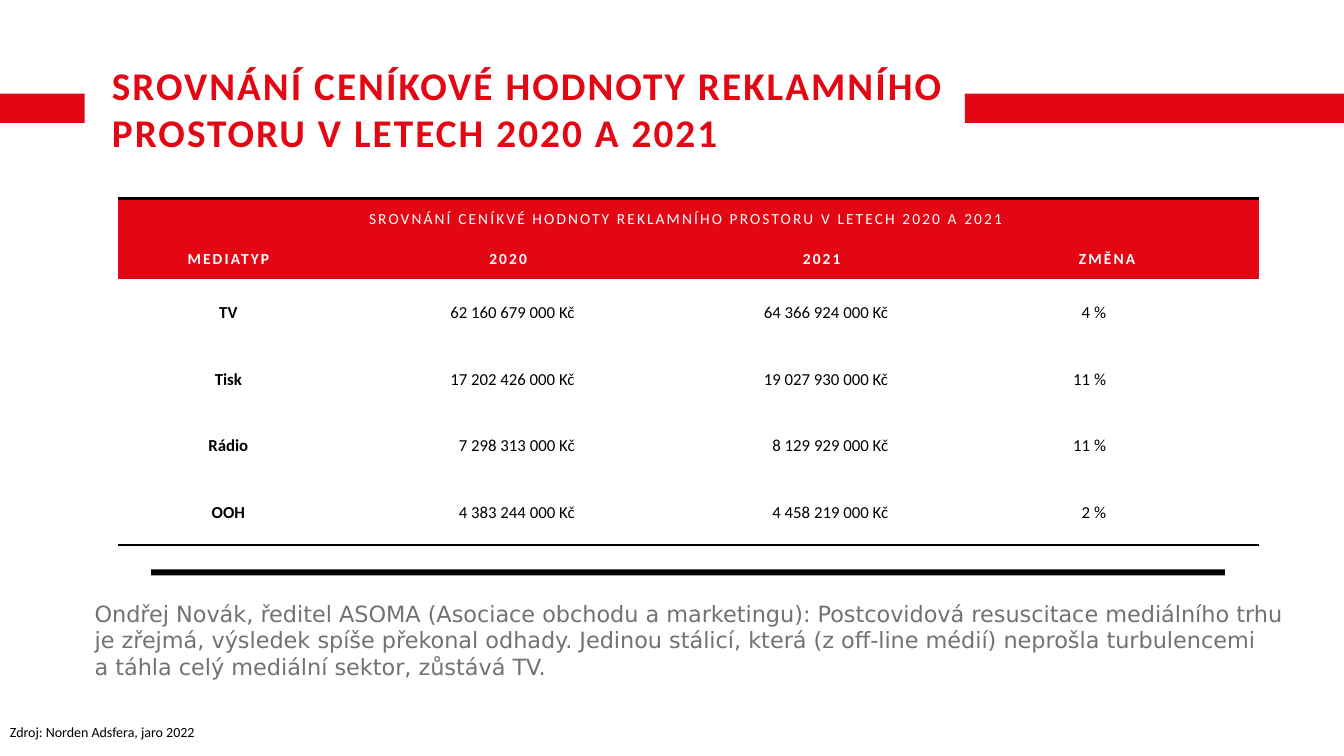
import pptx
import pptx.dml.color
import pptx.enum.shapes
import pptx.enum.text
import pptx.oxml
import pptx.oxml.ns
import pptx.util

Inches = pptx.util.Inches
Pt = pptx.util.Pt
Align = pptx.enum.text.PP_ALIGN
Anchor = pptx.enum.text.MSO_ANCHOR
RGBColor = pptx.dml.color.RGBColor

RED = RGBColor(0xE3, 0x06, 0x13)
BLACK = RGBColor(0, 0, 0)
WHITE = RGBColor(0xFF, 0xFF, 0xFF)
GREY = RGBColor(0x70, 0x72, 0x76)

NO_GRID_STYLE = "{2D5ABB26-0587-4C30-8999-92F81FD0307C}"
TITLE = "SROVNÁNÍ CENÍKOVÉ HODNOTY REKLAMNÍHO PROSTORU V LETECH 2020 A 2021"
TABLE_TITLE = "SROVNÁNÍ CENÍKVÉ HODNOTY REKLAMNÍHO PROSTORU V LETECH 2020 A 2021"
HEADINGS = ["MEDIATYP", "2020", "2021", "ZMĚNA"]
HEADING_INDENTS = [0.01, 0.27, 0.38, 0.01]
MEDIA = [
    ["TV", "62 160 679 000 Kč", "64 366 924 000 Kč", "4 %"],
    ["Tisk", "17 202 426 000 Kč", "19 027 930 000 Kč", "11 %"],
    ["Rádio", "7 298 313 000 Kč", "8 129 929 000 Kč", "11 %"],
    ["OOH", "4 383 244 000 Kč", "4 458 219 000 Kč", "2 %"],
]
VALUE_INDENTS = [0.01, 0.76, 0.66, 0.01]
COLUMN_WIDTHS = [2.19, 3.1, 3.01, 1.51, 1.51]
ROW_HEIGHTS = [0.4] * 2 + [0.66] * 4
QUOTE = (
    "Ondřej Novák, ředitel ASOMA (Asociace obchodu a marketingu): Postcovidová resuscitace mediálního trhu\v"
    "je zřejmá, výsledek spíše překonal odhady. Jedinou stálicí, která (z off-line médií) neprošla turbulencemi\v"
    "a táhla celý mediální sektor, zůstává TV."
)
SOURCE = "Zdroj: Norden Adsfera, jaro 2022"


def style_text(frame, size, color, name="Calibri", bold=False, align=Align.LEFT, tracking=0):
    """Format every paragraph; tracking is the letter spacing in points."""
    for para in frame.paragraphs:
        para.alignment = align
        para.font.size = Pt(size)
        para.font.name = name
        para.font.bold = bold
        para.font.color.rgb = color
        if tracking:
            for span in para.runs:
                span.font._element.set("spc", str(int(tracking * 100)))


def add_title(page):
    title = page.shapes.title
    title.left, title.top = Inches(1.01), Inches(0.6)
    title.width, title.height = Inches(8.92), Inches(0.94)
    title.text_frame.text = TITLE
    title.text_frame.vertical_anchor = Anchor.MIDDLE
    style_text(title.text_frame, 28, RED, bold=True, tracking=1.5)


def add_bar(page, left, top, width, height, color):
    bar = page.shapes.add_shape(
        pptx.enum.shapes.MSO_SHAPE.RECTANGLE,
        Inches(left), Inches(top), Inches(width), Inches(height))
    bar.shadow.inherit = False
    bar.fill.solid()
    bar.fill.fore_color.rgb = color
    bar.line.fill.background()


def add_text(page, left, top, width, height, text, size, color, name="Calibri"):
    box = page.shapes.add_textbox(Inches(left), Inches(top), Inches(width), Inches(height))
    box.text_frame.word_wrap = True
    box.text_frame.text = text
    style_text(box.text_frame, size, color, name)


def fill_cell(cell, text, fill, left=0.01, right=0.01, **text_style):
    cell.fill.solid()
    cell.fill.fore_color.rgb = fill
    cell.vertical_anchor = Anchor.MIDDLE
    cell.margin_left, cell.margin_right = Inches(left), Inches(right)
    cell.margin_top, cell.margin_bottom = Inches(0.01), 0
    cell.text = text
    style_text(cell.text_frame, **text_style)


def rule_cell(cell, side):
    """Draw a black 2 pt border on side T or B."""
    border = pptx.oxml.parse_xml(
        f'<a:ln{side} {pptx.oxml.ns.nsdecls("a")} w="{Pt(2)}">'
        f'<a:solidFill><a:srgbClr val="{BLACK}"/></a:solidFill></a:ln{side}>')
    cell._tc.get_or_add_tcPr().insert(0, border)


def add_media_table(page):
    frame = page.shapes.add_table(
        len(ROW_HEIGHTS), len(COLUMN_WIDTHS), Inches(1.17), Inches(1.97),
        Inches(sum(COLUMN_WIDTHS)), Inches(sum(ROW_HEIGHTS)))
    table = frame.table
    table.first_row = table.horz_banding = False
    table._tbl.tblPr.find(pptx.oxml.ns.qn("a:tableStyleId")).text = NO_GRID_STYLE
    for column, width in zip(table.columns, COLUMN_WIDTHS):
        column.width = Inches(width)
    for row, height in zip(table.rows, ROW_HEIGHTS):
        row.height = Inches(height)

    table.cell(0, 0).merge(table.cell(0, 4))
    table.cell(1, 3).merge(table.cell(1, 4))
    heading_style = dict(size=11, color=WHITE, align=Align.CENTER, tracking=1.5)
    fill_cell(table.cell(0, 0), TABLE_TITLE, RED, right=0.06, **heading_style)
    for index, (heading, indent) in enumerate(zip(HEADINGS, HEADING_INDENTS)):
        fill_cell(table.cell(1, index), heading, RED, left=indent, bold=True, **heading_style)

    for row_index, values in enumerate(MEDIA, start=2):
        for index, (value, indent) in enumerate(zip(values, VALUE_INDENTS)):
            is_name = index == 0
            fill_cell(table.cell(row_index, index), value, WHITE, right=indent,
                      size=12, color=BLACK, bold=is_name,
                      align=Align.CENTER if is_name else Align.RIGHT)
        fill_cell(table.cell(row_index, 4), "", WHITE, size=12, color=BLACK)

    for index in range(len(COLUMN_WIDTHS)):
        rule_cell(table.cell(0, index), "T")
        rule_cell(table.cell(len(ROW_HEIGHTS) - 1, index), "B")


def main():
    deck = pptx.Presentation()
    deck.slide_width, deck.slide_height = Inches(13.33), Inches(7.5)
    page = deck.slides.add_slide(deck.slide_layouts.get_by_name("Title Only"))
    add_title(page)
    add_bar(page, 0, 0.93, 0.84, 0.29, RED)
    add_bar(page, 9.57, 0.93, 3.76, 0.29, RED)
    add_media_table(page)
    add_bar(page, 1.5, 5.65, 10.65, 0.06, BLACK)
    add_text(page, 0.84, 5.9, 12.17, 0.91, QUOTE, 16, GREY, "DejaVu Sans")
    add_text(page, 0, 7.13, 3, 0.27, SOURCE, 10, BLACK)
    deck.save("out.pptx")


if __name__ == "__main__":
    main()
